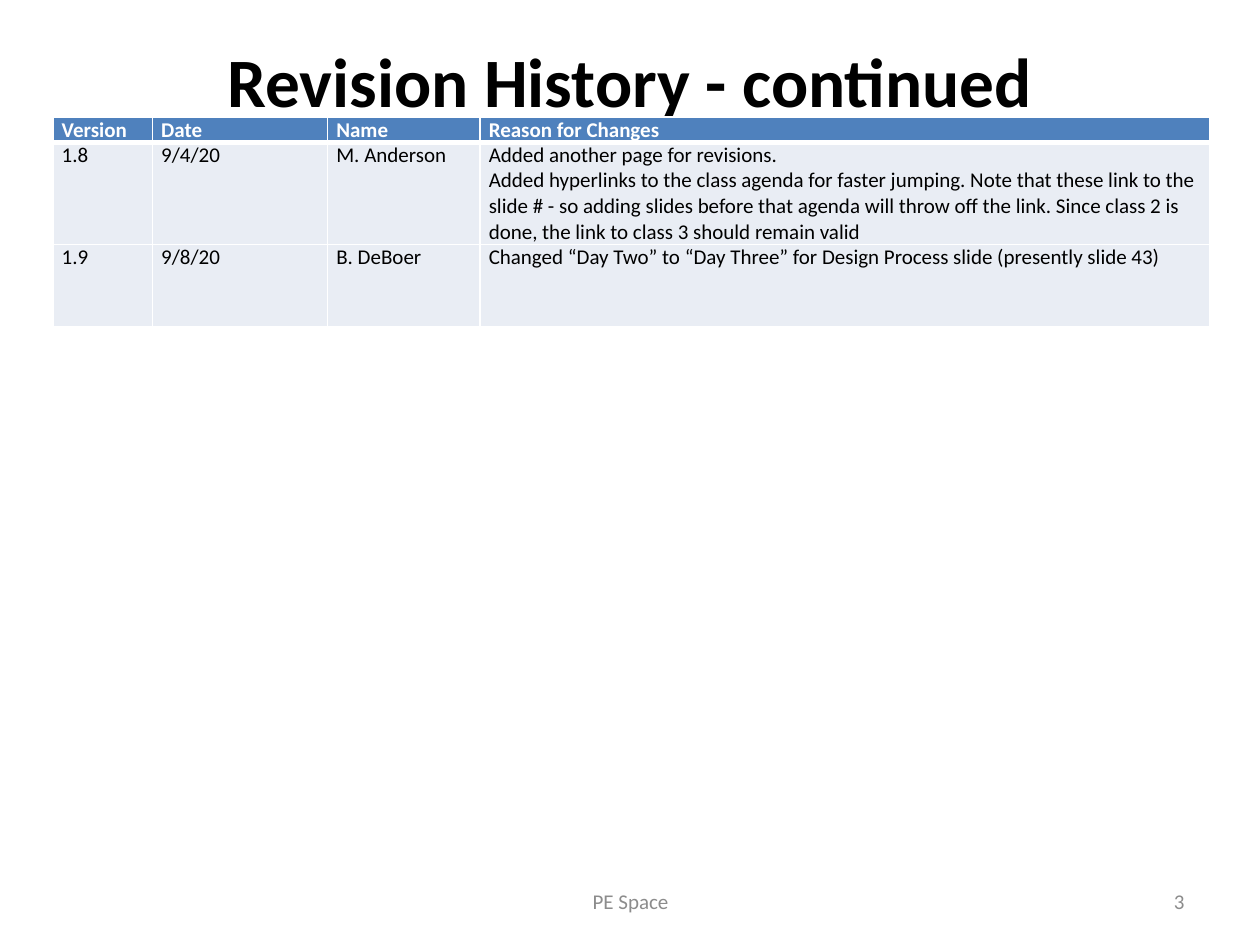
from lxml import etree
from pptx import Presentation
from pptx.dml.color import RGBColor
from pptx.enum.text import MSO_ANCHOR as Anchor, PP_ALIGN as Align
from pptx.oxml.ns import qn
from pptx.util import Inches, Pt


def color(value):
    return RGBColor.from_string(value)


def write(frame, text, size=12, fill="000000", bold=False, align=Align.LEFT):
    frame.word_wrap = True
    paragraph = frame.paragraphs[0]
    paragraph.text = text
    paragraph.alignment = align
    for run in paragraph.runs:
        run.font.name = "Calibri"
        run.font.size = Pt(size)
        run.font.bold = bold
        run.font.color.rgb = color(fill)


presentation = Presentation()
presentation.slide_width = Inches(10)
presentation.slide_height = Inches(7.5)
slide = presentation.slides.add_slide(presentation.slide_layouts[6])

title = slide.shapes.add_textbox(Inches(0.5), Inches(0.3), Inches(9), Inches(1.25))
title.text_frame.margin_top = 0
write(title.text_frame, "Revision History - continued", size=39.6, bold=True, align=Align.CENTER)

rows = [
    ["Version", "Date", "Name", "Reason for Changes"],
    ["1.8", "9/4/20", "M. Anderson",
     "Added another page for revisions.\v"
     "Added hyperlinks to the class agenda for faster jumping. Note that these link to the "
     "slide # - so adding slides before that agenda will throw off the link. Since class 2 is "
     "done, the link to class 3 should remain valid"],
    ["1.9", "9/8/20", "B. DeBoer",
     "Changed “Day Two” to “Day Three” for Design Process slide (presently slide 43)"],
]
column_widths = [0.79, 1.39, 1.21, 5.79]
row_heights = [0.2, 0.81, 0.65]

table = slide.shapes.add_table(
    len(rows), len(column_widths), Inches(0.42), Inches(0.93),
    Inches(sum(column_widths)), Inches(sum(row_heights))).table
for column, width in zip(table.columns, column_widths):
    column.width = Inches(width)
for row, height in zip(table.rows, row_heights):
    row.height = Inches(height)

for row_index, texts in enumerate(rows):
    header = row_index == 0
    for column_index, text in enumerate(texts):
        cell = table.cell(row_index, column_index)
        cell.margin_left = cell.margin_right = Inches(0.07)
        cell.margin_top = cell.margin_bottom = 0
        write(cell.text_frame, text, fill="FFFFFF" if header else "000000", bold=header)
        properties = cell._tc.get_or_add_tcPr()
        border_widths = {"L": 1, "R": 1, "T": 3 if row_index == 1 else 1, "B": 3 if header else 1}
        for side, width in border_widths.items():
            line = etree.SubElement(properties, qn(f"a:ln{side}"), w=str(Pt(width)))
            solid = etree.SubElement(line, qn("a:solidFill"))
            etree.SubElement(solid, qn("a:srgbClr"), val="FFFFFF")
        cell.fill.solid()
        cell.fill.fore_color.rgb = color("4F81BD" if header else "E9EDF4")

for text, left, width, align in [
    ("PE Space", 3.42, 3.17, Align.CENTER),
    ("3", 7.17, 2.33, Align.RIGHT),
]:
    footer = slide.shapes.add_textbox(Inches(left), Inches(6.95), Inches(width), Inches(0.4))
    footer.text_frame.vertical_anchor = Anchor.MIDDLE
    write(footer.text_frame, text, fill="8C8C8C", align=align)

presentation.save("out.pptx")
